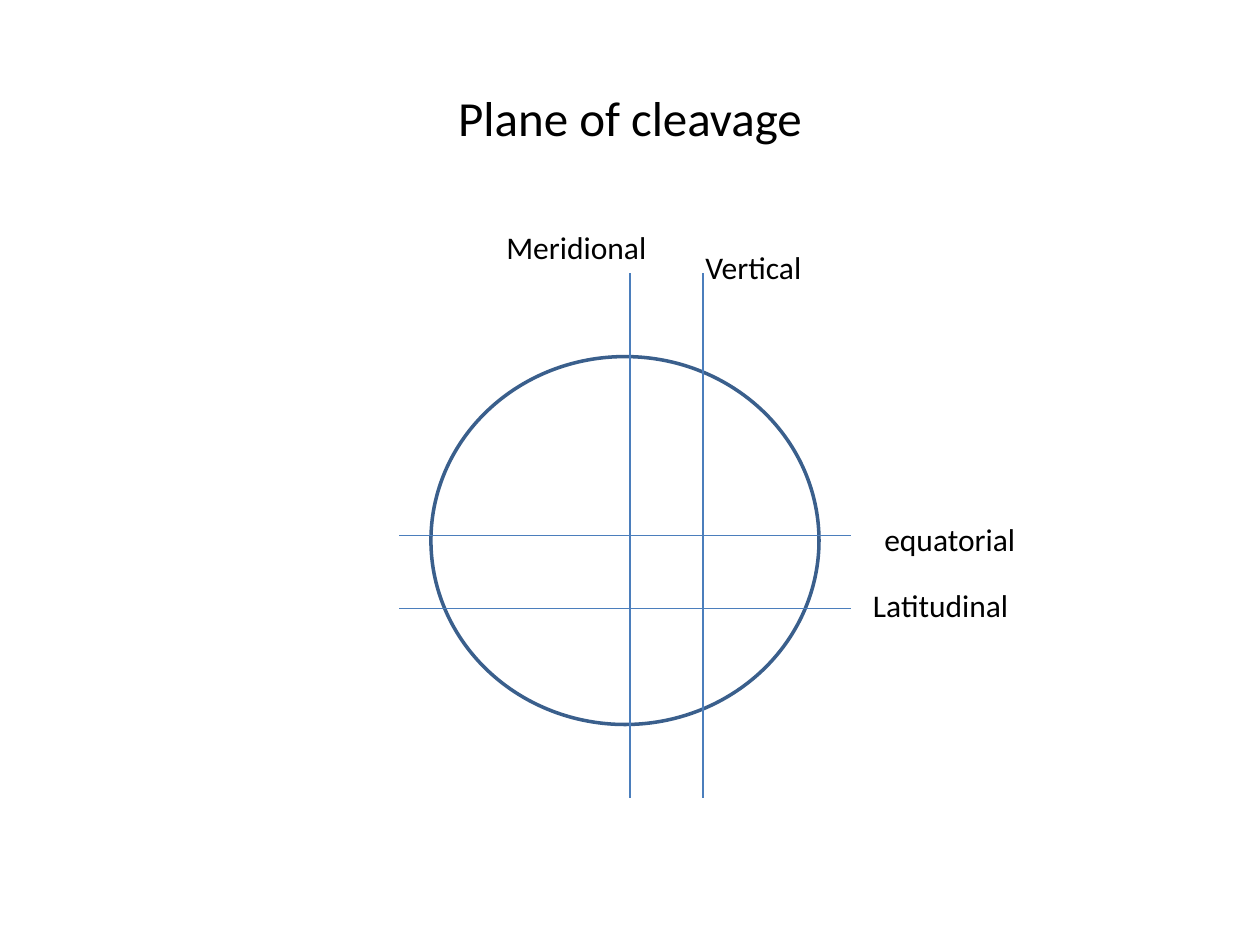
from typing import NamedTuple

from lxml.etree import SubElement
from pptx import Presentation
from pptx.dml.color import RGBColor
from pptx.enum.shapes import MSO_CONNECTOR, MSO_SHAPE
from pptx.enum.text import MSO_ANCHOR, MSO_AUTO_SIZE, PP_ALIGN
from pptx.oxml.ns import qn
from pptx.util import Inches, Pt

COLORS = {"text": "000000", "egg": "3A5F8C", "plane": "4B7EBC"}
FONT = "Calibri"


class Plane(NamedTuple):
    start: tuple[float, float]
    end: tuple[float, float]


class Label(NamedTuple):
    text: str
    left: float
    top: float


TOP, BOTTOM = 2.17, 6.33
LEFT, RIGHT = 3.17, 6.75
PLANES = [Plane((x, TOP), (x, BOTTOM)) for x in (5, 5.58)]
PLANES += [Plane((LEFT, y), (RIGHT, y)) for y in (4.25, 4.83)]

LABELS = [
    Label("equatorial", 6.92, 4.08),
    Label("Latitudinal", 6.83, 4.6),
    Label("Vertical", 5.5, 1.92),
    Label("Meridional", 3.92, 1.76),
]


def color(name: str) -> RGBColor:
    return RGBColor.from_string(COLORS[name])


def set_font(paragraph, size: float) -> None:
    paragraph.font.name = FONT
    paragraph.font.size = Pt(size)
    paragraph.font.color.rgb = color("text")


def add_title(slide, text: str) -> None:
    title = slide.shapes.title
    title.left, title.top = Inches(0.5), Inches(0.3)
    title.width, title.height = Inches(9), Inches(1.25)
    title.text_frame.text = text
    title.text_frame.vertical_anchor = MSO_ANCHOR.MIDDLE
    heading = title.text_frame.paragraphs[0]
    heading.alignment = PP_ALIGN.CENTER
    set_font(heading, 28)


def add_egg(slide) -> None:
    egg = slide.shapes.add_shape(
        MSO_SHAPE.OVAL, Inches(3.42), Inches(2.83), Inches(3.08), Inches(2.92)
    )
    egg.shadow.inherit = False
    egg.fill.background()
    egg.line.color.rgb = color("egg")
    egg.line.width = Pt(2)


def add_plane(slide, plane: Plane) -> None:
    line = slide.shapes.add_connector(
        MSO_CONNECTOR.STRAIGHT, *map(Inches, plane.start + plane.end)
    )
    line.line.color.rgb = color("plane")
    line.line.width = Pt(0.75)
    SubElement(line._element.spPr, qn("a:effectLst"))


def add_label(slide, label: Label) -> None:
    box = slide.shapes.add_textbox(
        Inches(label.left), Inches(label.top), Inches(2.25), Inches(0.4)
    )
    frame = box.text_frame
    frame.word_wrap = True
    frame.auto_size = MSO_AUTO_SIZE.SHAPE_TO_FIT_TEXT
    frame.text = label.text
    set_font(frame.paragraphs[0], 18)


def main() -> None:
    presentation = Presentation()
    presentation.slide_width, presentation.slide_height = Inches(10), Inches(7.5)
    title_only = presentation.slide_layouts[5]
    slide = presentation.slides.add_slide(title_only)
    add_title(slide, "Plane of cleavage")
    add_egg(slide)
    for plane in PLANES:
        add_plane(slide, plane)
    for label in LABELS:
        add_label(slide, label)
    presentation.save("out.pptx")


if __name__ == "__main__":
    main()
